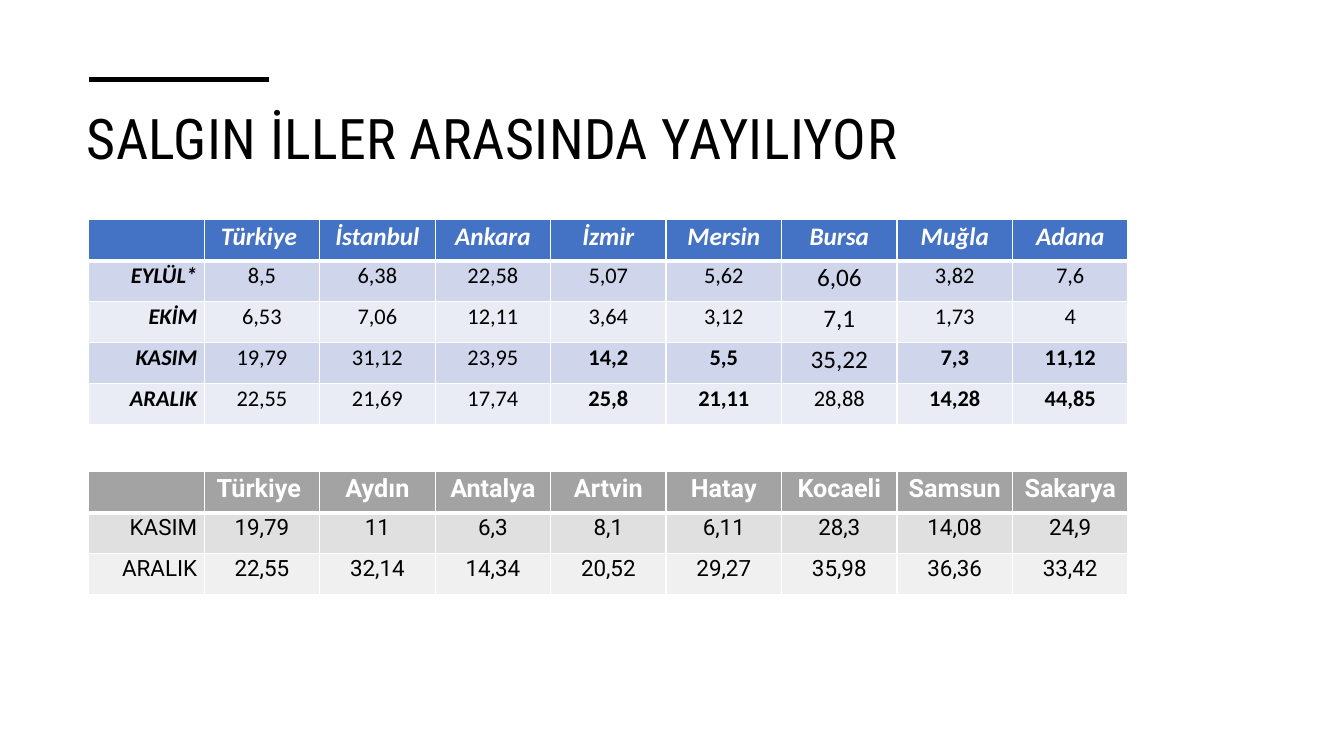
from dataclasses import dataclass

from lxml.etree import SubElement
from pptx import Presentation
from pptx.dml.color import RGBColor
from pptx.enum.shapes import MSO_CONNECTOR
from pptx.enum.text import MSO_ANCHOR, MSO_AUTO_SIZE, PP_ALIGN
from pptx.oxml.ns import qn
from pptx.slide import Slide
from pptx.table import _Cell
from pptx.util import Inches, Pt

BLACK = RGBColor(0x00, 0x00, 0x00)
WHITE = RGBColor(0xFF, 0xFF, 0xFF)
BLUE = RGBColor(0x44, 0x72, 0xC4)
BLUE_BANDS = (RGBColor(0xCF, 0xD5, 0xEA), RGBColor(0xE9, 0xEB, 0xF5))
GRAY = RGBColor(0xA3, 0xA3, 0xA3)
GRAY_BANDS = (RGBColor(0xE0, 0xE0, 0xE0), RGBColor(0xF0, 0xF0, 0xF0))

LEFT = Inches(0.88)
TABLE_WIDTH = Inches(10.31)
ROW_HEIGHT = Inches(0.406)


@dataclass(frozen=True)
class RateTable:
    top: float
    font: str
    header_fill: RGBColor
    bands: tuple[RGBColor, RGBColor]
    rows: list[list[str]]
    italic_labels: bool = False
    bold_labels: bool = False
    bold_cells: frozenset[tuple[int, int]] = frozenset()
    large_cells: frozenset[tuple[int, int]] = frozenset()


RATE_TABLES = [
    RateTable(
        2.18, "Calibri", BLUE, BLUE_BANDS,
        [
            ["", "Türkiye ", "İstanbul", "Ankara", "İzmir", "Mersin", "Bursa", "Muğla", "Adana"],
            ["EYLÜL*", "8,5", "6,38", "22,58", "5,07", "5,62", "6,06", "3,82", "7,6"],
            ["EKİM", "6,53", "7,06", "12,11", "3,64", "3,12", "7,1", "1,73", "4"],
            ["KASIM", "19,79", "31,12", "23,95", "14,2", "5,5", "35,22", "7,3", "11,12"],
            ["ARALIK", "22,55", "21,69", "17,74", "25,8", "21,11", "28,88", "14,28", "44,85"],
        ],
        italic_labels=True,
        bold_labels=True,
        bold_cells=frozenset((row, column) for row in (3, 4) for column in (4, 5, 7, 8)),
        large_cells=frozenset((row, 6) for row in (1, 2, 3)),
    ),
    RateTable(
        4.68, "Roboto", GRAY, GRAY_BANDS,
        [
            ["", "Türkiye ", "Aydın", "Antalya", "Artvin", "Hatay", "Kocaeli", "Samsun", "Sakarya"],
            ["KASIM", "19,79", "11", "6,3", "8,1", "6,11", "28,3", "14,08", "24,9"],
            ["ARALIK", "22,55", "32,14", "14,34", "20,52", "29,27", "35,98", "36,36", "33,42"],
        ],
    ),
]


def add_title(slide: Slide, text: str) -> None:
    title = slide.shapes.title
    title.left, title.top = Inches(0.76), Inches(0.98)
    title.width, title.height = Inches(10.36), Inches(1.72)
    frame = title.text_frame
    frame.text = text
    frame.word_wrap = True
    frame.auto_size = MSO_AUTO_SIZE.NONE
    frame.vertical_anchor = MSO_ANCHOR.TOP
    para = frame.paragraphs[0]
    para.alignment = PP_ALIGN.LEFT
    para.font.name = "Roboto Condensed"
    para.font.size = Pt(40)
    para.font.color.rgb = BLACK
    para._p.get_or_add_pPr().get_or_add_defRPr().set("spc", "30")


def add_accent_line(slide: Slide) -> None:
    line = slide.shapes.add_connector(
        MSO_CONNECTOR.STRAIGHT, LEFT, Inches(0.79), Inches(2.67), Inches(0.79)
    )
    line.line.color.rgb = BLACK
    line.line.width = Pt(3.5)
    SubElement(line._element.spPr, qn("a:effectLst"))


def set_borders(cell: _Cell, top: float, bottom: float) -> None:
    """Give the cell white borders; widths are in points."""
    properties = cell._tc.get_or_add_tcPr()
    for side, width in (("L", 1), ("R", 1), ("T", top), ("B", bottom)):
        border = SubElement(properties, qn(f"a:ln{side}"), w=str(Pt(width)))
        fill = SubElement(border, qn("a:solidFill"))
        SubElement(fill, qn("a:srgbClr"), val=str(WHITE))


def fill_cell(cell: _Cell, rates: RateTable, row: int, column: int) -> None:
    is_header = row == 0
    is_label = column == 0 and not is_header
    set_borders(cell, top=3 if row == 1 else 1, bottom=3 if is_header else 1)
    cell.fill.solid()
    cell.fill.fore_color.rgb = rates.header_fill if is_header else rates.bands[(row - 1) % 2]
    cell.margin_left = cell.margin_right = Inches(0.07)
    cell.margin_top = cell.margin_bottom = 0
    cell.text = rates.rows[row][column]

    para = cell.text_frame.paragraphs[0]
    para.alignment = PP_ALIGN.RIGHT if is_label else PP_ALIGN.CENTER
    para.line_spacing = 1.07
    font = para.font
    font.name = rates.font
    font.size = Pt(18 if is_header or (row, column) in rates.large_cells else 16)
    font.color.rgb = WHITE if is_header else BLACK
    font.bold = is_header or (is_label and rates.bold_labels) or (row, column) in rates.bold_cells
    font.italic = rates.italic_labels and (is_header or is_label)


def add_rate_table(slide: Slide, rates: RateTable) -> None:
    row_count, column_count = len(rates.rows), len(rates.rows[0])
    table = slide.shapes.add_table(
        row_count, column_count, LEFT, Inches(rates.top), TABLE_WIDTH, ROW_HEIGHT * row_count
    ).table
    for row in range(row_count):
        for column in range(column_count):
            fill_cell(table.cell(row, column), rates, row, column)


def main() -> None:
    deck = Presentation()
    deck.slide_width, deck.slide_height = Inches(13.33), Inches(7.5)
    slide = deck.slides.add_slide(deck.slide_layouts[5])
    add_title(slide, "SALGIN İLLER ARASINDA YAYILIYOR")
    add_accent_line(slide)
    for rates in RATE_TABLES:
        add_rate_table(slide, rates)
    deck.save("out.pptx")


if __name__ == "__main__":
    main()
